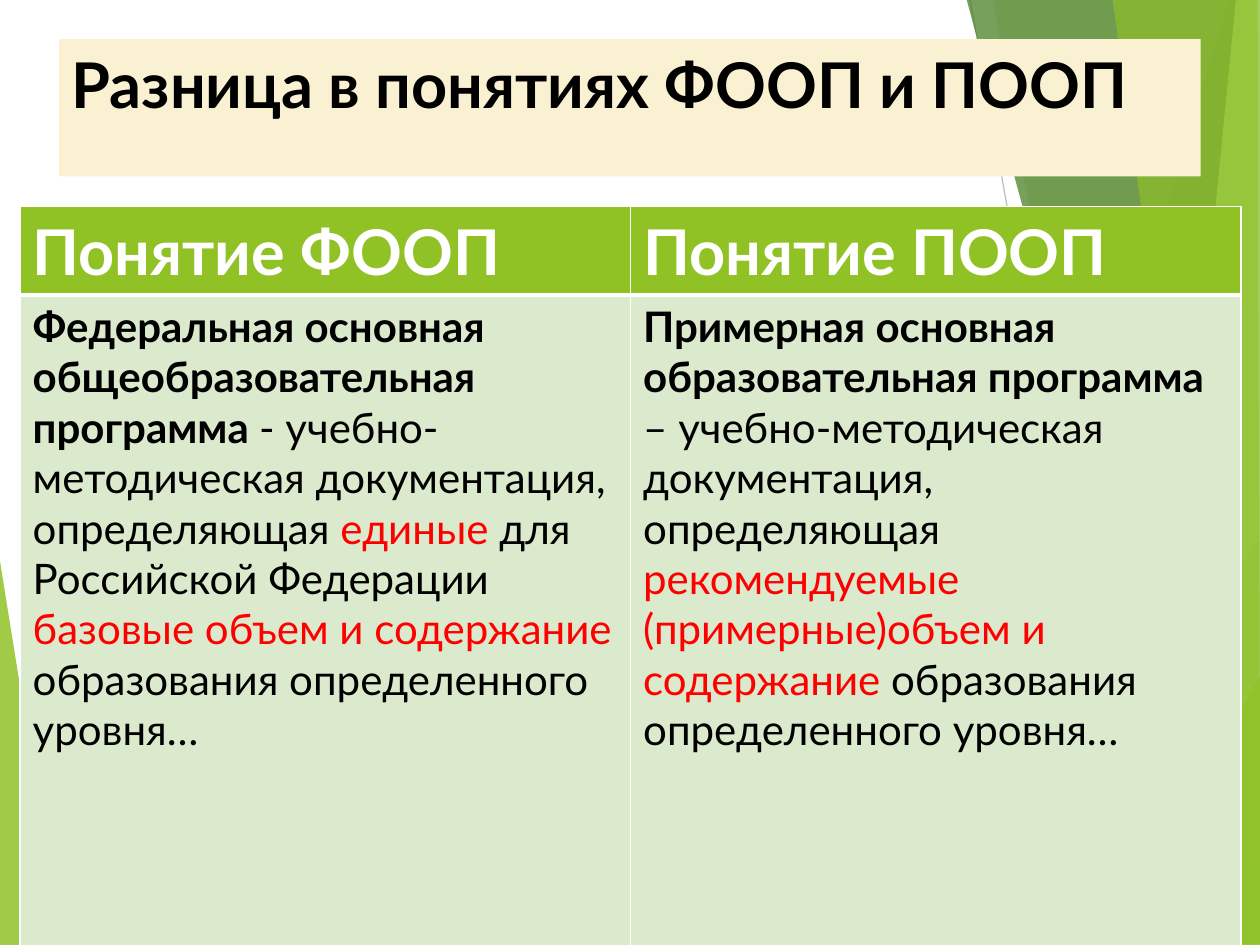
from lxml import etree
from pptx import Presentation
from pptx.dml.color import RGBColor
from pptx.enum.shapes import MSO_CONNECTOR
from pptx.enum.text import MSO_ANCHOR, MSO_AUTO_SIZE, PP_ALIGN
from pptx.oxml.ns import qn
from pptx.util import Inches, Pt

STRAIGHT = MSO_CONNECTOR.STRAIGHT
TOP, LEFT, NO_FIT = MSO_ANCHOR.TOP, PP_ALIGN.LEFT, MSO_AUTO_SIZE.NONE

GREEN = RGBColor(0x90, 0xC2, 0x26)
MID_GREEN = RGBColor(0x54, 0xA0, 0x21)
DARK_GREEN = RGBColor(0x3F, 0x78, 0x19)
LIME = RGBColor(0xC0, 0xE4, 0x74)
PALE_GREEN = RGBColor(0xDB, 0xE9, 0xCD)
CREAM = RGBColor(0xFA, 0xF1, 0xD2)
LIGHT_GREY = RGBColor(0xD9, 0xD9, 0xD9)
GREY = RGBColor(0xBF, 0xBF, 0xBF)
BLACK = RGBColor(0, 0, 0)
WHITE = RGBColor(0xFF, 0xFF, 0xFF)
RED = RGBColor(0xFF, 0, 0)

HEADING = {"name": "Lato", "size": Pt(36), "bold": True}
BODY = {"name": "Lato", "size": Pt(24), "bold": False}

# Corners in inches, colour, opacity in percent
LEFT_FACET = ([(-0.01, 4.39), (0.49, 7.51), (-0.01, 7.5)], GREEN, 85)
RIGHT_FACETS = [
    ([(9.75, 0), (7.54, 7.5), (10.02, 7.51), (10.01, 0.01)], GREEN, 30),
    ([(7.88, -0.01), (9.19, 7.5), (10.01, 7.5), (10.01, -0.01)], GREEN, 20),
    ([(7.26, 7.5), (10, 4.29), (10.01, 7.5)], MID_GREEN, 72),
    ([(7.67, -0.01), (9.7, 7.5), (10.01, 7.49), (10.01, -0.01)], DARK_GREEN, 70),
    ([(9.81, -0.01), (9.07, 7.5), (10.01, 7.5), (10, -0.01)], LIME, 70),
    ([(8.83, -0.01), (9.86, 7.5), (10, 7.5), (9.98, -0.01)], GREEN, 65),
    ([(8.81, 7.5), (10.01, 5.35), (10.01, 7.49)], GREEN, 80),
]
RAYS = [((5.61, 7.5), (10.01, 4.57), LIGHT_GREY), ((7.7, 0), (9.04, 7.5), GREY)]

HEADERS = ["Понятие ФООП", "Понятие ПООП"]
DEFINITIONS = [
    [("Федеральная основная общеобразовательная программа ", True, BLACK),
     ("- учебно-методическая документация, определяющая ", False, BLACK),
     ("единые ", False, RED),
     ("для Российской Федерации ", False, BLACK),
     ("базовые объем и содержание ", False, RED),
     ("образования определенного уровня…", False, BLACK)],
    [("Примерная основная образовательная программа ", True, BLACK),
     ("– учебно-методическая документация, определяющая ", False, BLACK),
     ("рекомендуемые (примерные)объем и содержание ", False, RED),
     ("образования определенного уровня…", False, BLACK)],
]


def add_run(p, text, color, style):
    r = p.add_run()
    r.text = text
    for key, value in style.items():
        setattr(r.font, key, value)
    r.font.color.rgb = color


def add_facet(slide, corners, color, opacity):
    points = [(Inches(x), Inches(y)) for x, y in corners]
    builder = slide.shapes.build_freeform(*points[0])
    builder.add_line_segments(points[1:], close=True)
    sp = builder.convert_to_shape()
    sp.shadow.inherit = False
    sp.fill.solid()
    sp.fill.fore_color.rgb = color
    clr = sp._element.spPr.find(qn("a:solidFill"))[0]
    etree.SubElement(clr, qn("a:alpha"), val=str(opacity * 1000))
    sp.line.fill.background()


def add_ray(slide, start, end, color):
    line = slide.shapes.add_connector(STRAIGHT, *map(Inches, start + end))
    line.line.color.rgb = color
    line.line.width = Pt(0.75)
    etree.SubElement(line._element.spPr, qn("a:effectLst"))


def add_backdrop(slide):
    add_facet(slide, *LEFT_FACET)
    for ray in RAYS:
        add_ray(slide, *ray)
    for facet in RIGHT_FACETS:
        add_facet(slide, *facet)


def place_title(slide, left, top, width, height):
    title = slide.shapes.title
    slide.shapes._spTree.append(title._element)  # in front of the backdrop
    title.left, title.top, title.width, title.height = left, top, width, height
    title.fill.solid()
    title.fill.fore_color.rgb = CREAM
    tf = title.text_frame
    tf.word_wrap, tf.auto_size, tf.vertical_anchor = True, NO_FIT, TOP
    p = tf.paragraphs[0]
    p.alignment = LEFT
    add_run(p, "Разница в понятиях ФООП и ПООП", BLACK, HEADING)


def set_borders(cell, widths):
    """Draw white borders; widths maps a side (L, R, T, B) to points."""
    tcPr = cell._tc.get_or_add_tcPr()
    for i, side in enumerate("LRTB"):
        ln = etree.Element(qn(f"a:ln{side}"), w=str(Pt(widths[side])))
        fill = etree.SubElement(ln, qn("a:solidFill"))
        etree.SubElement(fill, qn("a:srgbClr"), val=str(WHITE))
        tcPr.insert(i, ln)


def format_cell(cell, fill, top, bottom):
    cell.fill.solid()
    cell.fill.fore_color.rgb = fill
    set_borders(cell, {"L": 1, "R": 1, "T": top, "B": bottom})


def add_comparison(slide, left, top, width, height):
    table = slide.shapes.add_table(2, 2, left, top, width, height).table
    table.rows[0].height = Inches(0.7)
    table.rows[1].height = height - Inches(0.7)
    for col, (header, definition) in enumerate(zip(HEADERS, DEFINITIONS)):
        head, body = table.cell(0, col), table.cell(1, col)
        format_cell(head, GREEN, 1, 3)
        format_cell(body, PALE_GREEN, 3, 1)
        add_run(head.text_frame.paragraphs[0], header, WHITE, HEADING)
        for text, bold, color in definition:
            add_run(body.text_frame.paragraphs[0], text, color, {**BODY, "bold": bold})


def main():
    prs = Presentation()
    prs.slide_width, prs.slide_height = Inches(10), Inches(7.5)
    slide = prs.slides.add_slide(prs.slide_layouts[5])
    add_backdrop(slide)
    place_title(slide, Inches(0.47), Inches(0.31), Inches(9.06), Inches(1.09))
    add_comparison(slide, Inches(0.16), Inches(1.64), Inches(9.69), Inches(5.89))
    prs.save("out.pptx")


if __name__ == "__main__":
    main()
